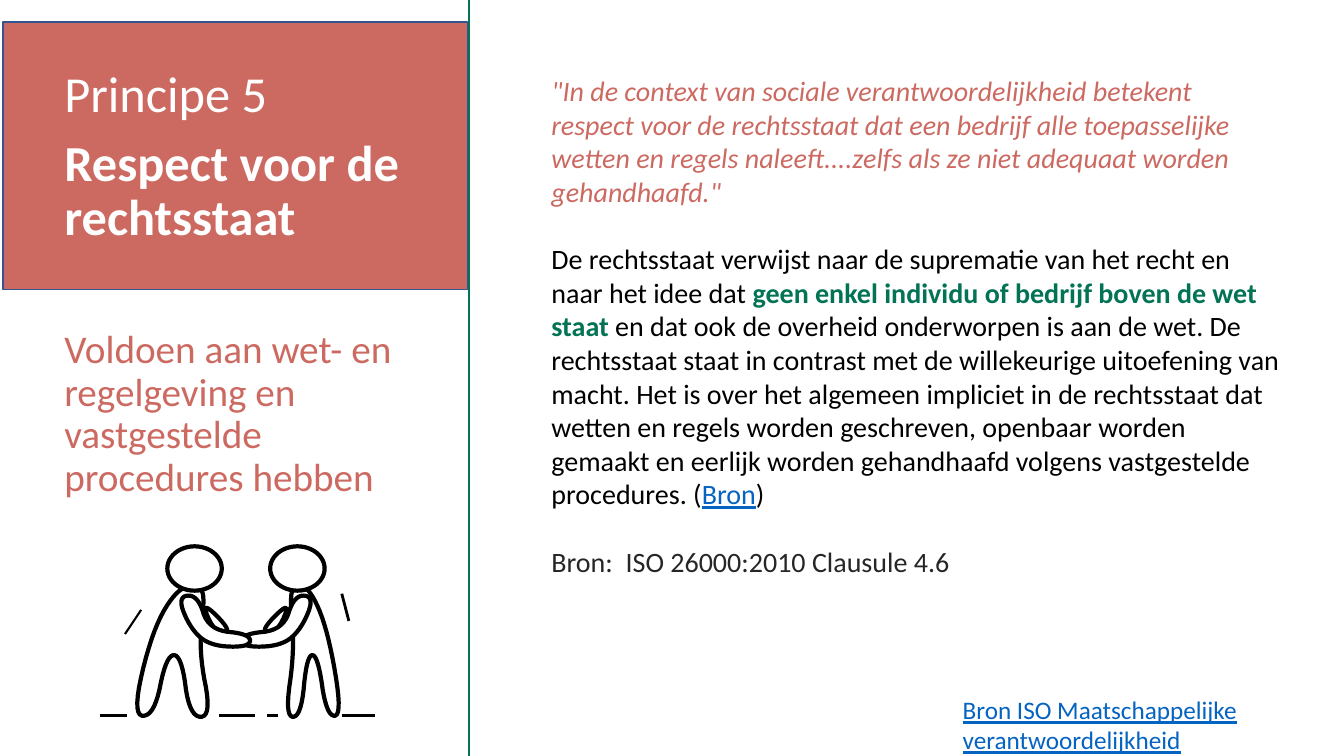
from lxml import etree
from pptx import Presentation
from pptx.dml.color import RGBColor
from pptx.enum import shapes, text
from pptx.oxml import ns
from pptx.util import Inches, Pt

COLORS = {"coral": "CC6A62", "green": "027354", "navy": "325491", "link": "0563C1",
          "dark": "262626", "black": "000000", "white": "FFFFFF"}
rgb = {name: RGBColor.from_string(value) for name, value in COLORS.items()}

prs = Presentation()
prs.slide_width, prs.slide_height = Inches(13.33), Inches(7.5)
s = prs.slides.add_slide(prs.slide_layouts[6])


def add_text(p, words, size=20, color="black", bold=False, italic=False, underline=False):
    r = p.add_run()
    r.text = words
    r.font.name, r.font.size = "Calibri", Pt(size)
    r.font.bold, r.font.italic, r.font.underline = bold, italic, underline
    r.font.color.rgb = rgb[color]


def style(sp, fill, line, width):
    sp.shadow.inherit = False
    sp.fill.solid()
    sp.fill.fore_color.rgb = rgb[fill]
    sp.line.color.rgb, sp.line.width = rgb[line], Pt(width)


# Title panel
panel = s.shapes.add_shape(shapes.MSO_SHAPE.RECTANGLE, Inches(0.03), Inches(0.22),
                           Inches(4.61), Inches(2.65))
style(panel, "coral", "navy", 1)

# Explanation: blocks of runs, one empty line apart
blocks = [
    [('"In de context van sociale verantwoordelijkheid betekent respect voor de rechtsstaat dat '
      "een bedrijf alle toepasselijke wetten en regels naleeft....zelfs als ze niet adequaat "
      'worden gehandhaafd."', {"color": "coral", "italic": True})],
    [("De rechtsstaat verwijst naar de suprematie van het recht en naar het idee dat ", {}),
     ("geen enkel individu of bedrijf boven de wet staat ", {"color": "green", "bold": True}),
     ("en dat ook de overheid onderworpen is aan de wet. De rechtsstaat staat in contrast met "
      "de willekeurige uitoefening van macht. Het is over het algemeen impliciet in de "
      "rechtsstaat dat wetten en regels worden geschreven, openbaar worden gemaakt en eerlijk "
      "worden gehandhaafd volgens vastgestelde procedures. (", {}),
     ("Bron", {"color": "link", "underline": True}),
     (")", {})],
    [("Bron:  ISO 26000:2010 Clausule 4.6", {"color": "dark"})]]
tf = s.shapes.add_textbox(Inches(5.37), Inches(0.68), Inches(7.42), Inches(4.58)).text_frame
tf.word_wrap = True
for i, block in enumerate(blocks):
    p = tf.add_paragraph() if i else tf.paragraphs[0]
    p.space_before = Pt(24 if i else 0)
    for words, look in block:
        add_text(p, words, **look)

# Title and subtitle
headings = [("Principe 5", 36, "white", False, 0),
            ("Respect voor de rechtsstaat", 36, "white", True, 10),
            ("Voldoen aan wet- en regelgeving en vastgestelde procedures hebben",
             28, "coral", False, 59.5)]
tf = s.shapes.add_textbox(Inches(0.54), Inches(0.64), Inches(3.87), Inches(6.14)).text_frame
tf.word_wrap = True
for i, (words, size, color, bold, gap) in enumerate(headings):
    p = tf.add_paragraph() if i else tf.paragraphs[0]
    p.line_spacing, p.space_before = 0.9, Pt(gap)
    add_text(p, words, size, color, bold)

# Handshake: one person, described by the distance in front of the head's centre and the height
# on the slide; the second person is the same one facing left, with a narrower stance
back, chest = [(-0.16, 5.82), (-0.42, 6.25)], [(0.04, 6.45), (0.1, 5.95), (0.06, 5.82)]
back_leg = [(-0.62, 7.1), (-0.4, 7.1), (-0.28, 6.5)]
front_leg = [(-0.13, 6.5), (-0.05, 7.11), (0.17, 7.11)]
body = back + back_leg + front_leg + chest
far_arm = [(0.06, 5.95), (0.38, 6.27), (0.2, 6.28)]
near_arm = [(-0.17, 5.92), (0.03, 5.9), (0.14, 6.25), (0.55, 6.29), (0.55, 6.42),
            (0.16, 6.41), (-0.04, 6.24)]
head_w, head_h, head_y = 0.54, 0.44, 5.64

handshake = s.shapes.add_group_shape()
for head_x, facing, stance in [(2.95, -1, 0.72), (1.93, 1, 1)]:
    for part, width in [(far_arm, 1), (body, stance), (near_arm, 1)]:
        points = [(head_x + facing * width * dx, y) for dx, y in part]
        for _ in range(3):  # cut every corner at a quarter of its sides to round the outline
            pairs = zip(points, points[1:] + points[:1])
            points = [(a + t * (c - a), b + t * (d - b))
                      for (a, b), (c, d) in pairs for t in (0.25, 0.75)]
        corners = [(Inches(x), Inches(y)) for x, y in points]
        builder = handshake.shapes.build_freeform(*corners[0])
        builder.add_line_segments(corners[1:], close=True)
        style(builder.convert_to_shape(), "white", "black", 3)
    head = handshake.shapes.add_shape(
        shapes.MSO_SHAPE.OVAL, Inches(head_x - head_w / 2), Inches(head_y - head_h / 2),
        Inches(head_w), Inches(head_h))
    style(head, "white", "black", 3)

# Straight lines: divider, ground dashes and motion strokes
ground_y = 7.1
ground = [(0.99, 1.26), (2.17, 2.53), (2.65, 2.76), (3.39, 3.72)]
lines = [(4.65, 0, 4.65, 7.5, "green", 1)]
lines += [(x1, ground_y, x2, ground_y, "black", 2.5) for x1, x2 in ground]
lines += [(1.24, 6.29, 1.4, 6.05, "black", 1.5), (3.39, 5.89, 3.46, 6.16, "black", 2)]
for x1, y1, x2, y2, color, width in lines:
    line = s.shapes.add_connector(shapes.MSO_CONNECTOR.STRAIGHT, Inches(x1), Inches(y1),
                                  Inches(x2), Inches(y2))
    line.line.color.rgb, line.line.width = rgb[color], Pt(width)
    etree.SubElement(line._element.spPr, ns.qn("a:effectLst"))

# Source reference
sp = s.shapes.add_textbox(Inches(9.45), Inches(6.84), Inches(3.62), Inches(0.4))
sp.fill.solid()
sp.fill.fore_color.rgb = rgb["white"]
tf = sp.text_frame
tf.word_wrap = True
tf.auto_size = text.MSO_AUTO_SIZE.SHAPE_TO_FIT_TEXT
add_text(tf.paragraphs[0], "Bron ISO Maatschappelijke verantwoordelijkheid", 18, "link",
         underline=True)

prs.save("out.pptx")
